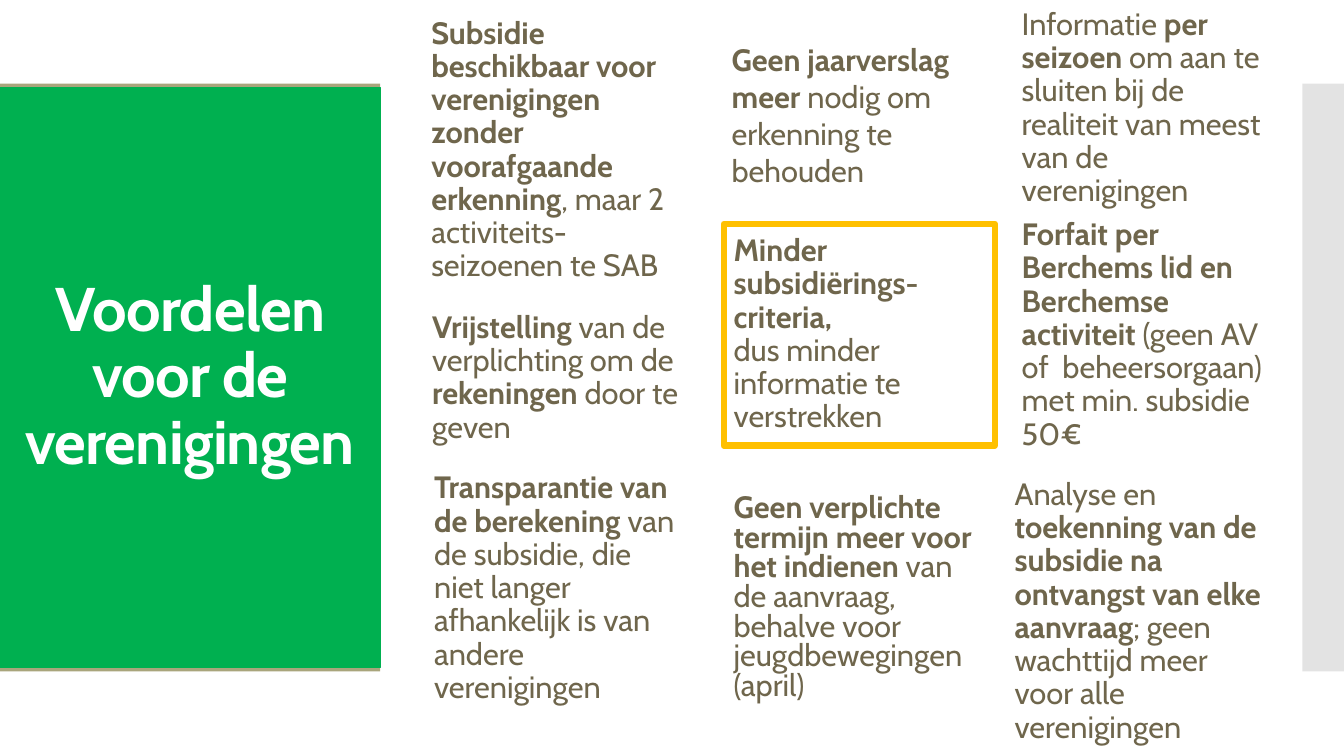
import pptx
import pptx.util
import pptx.dml.color
import pptx.enum.shapes
import pptx.enum.text
from lxml import etree

Cm, Pt = pptx.util.Cm, pptx.util.Pt
Text = pptx.enum.text


def paint(part, color):
    """Give a fill or a font colour from a hex string."""
    if hasattr(part, "solid"):
        part.solid()
        part = part.fore_color
    part.rgb = pptx.dml.color.RGBColor.from_string(color)


def write(box, text, look, color, gap, anchor):
    """Write one paragraph; words between asterisks are bold."""
    frame = box.text_frame
    frame.word_wrap = True
    frame.vertical_anchor = anchor
    para = frame.paragraphs[0]
    para.line_spacing = gap
    for i, part in enumerate(text.split("*")):
        for j, line in enumerate(part.split("\n")):
            if j:
                para.add_line_break()
            if line:
                run = para.add_run()
                run.text = line
                for key, value in look.items():
                    setattr(run.font, key, value)
                run.font.bold = i % 2 == 1
                paint(run.font.color, color)
    return para


deck = pptx.Presentation()
deck.slide_width, deck.slide_height = Cm(33.87), Cm(19.05)
slide = deck.slides.add_slide(deck.slide_layouts[6])

# Side bands and title panel
panels = []
for left, top, width, height, color in [
    (0, 2.11, 9.58, 14.81, "A9A57C"),
    (32.82, 2.11, 1.05, 14.81, "C8C8C8"),
    (0, 2.21, 9.58, 14.61, "00B050"),
]:
    panel = slide.shapes.add_shape(
        pptx.enum.shapes.MSO_SHAPE.RECTANGLE,
        Cm(left), Cm(top), Cm(width), Cm(height))
    panel.shadow.inherit = False
    paint(panel.fill, color)
    panel.line.fill.background()
    panels.append(panel)
band, edge, title = panels

# Half-clear band on the right
tint = edge.fill._xPr.find(".//" + pptx.oxml.ns.qn("a:srgbClr"))
etree.SubElement(tint, pptx.oxml.ns.qn("a:alpha"), val="50000")

# Title
paint(title.line.fill, "00B050")
title.line.width = Pt(0.75)
para = write(title, "*Voordelen voor de verenigingen*",
             {"name": "Cabin", "size": Pt(44)}, "FFFFFF", 0.9,
             Text.MSO_ANCHOR.MIDDLE)
para.alignment = Text.PP_ALIGN.CENTER
para.runs[0]._r.get_or_add_rPr().set("spc", "-60")

# Benefits, column by column
mid, high = Text.MSO_ANCHOR.MIDDLE, Text.MSO_ANCHOR.TOP
notes = [
    (10.62, 0.3, 7.24, 6.99, 0.9, mid,
     "*Subsidie beschikbaar voor verenigingen zonder voorafgaande erkenning*"
     ", maar 2 activiteits-seizoenen te SAB"),
    (10.64, 6.43, 6.83, 6.2, 0.9, mid,
     "*Vrijstelling* van de verplichting om de *rekeningen *door te geven"),
    (10.69, 12.04, 6.83, 5.59, 0.9, mid,
     "*Transparantie van de berekening* van de subsidie, "
     "die niet langer afhankelijk is van andere verenigingen"),
    (18.19, 0.91, 6.6, 4.01, 1.0, high,
     "*Geen jaarverslag meer *nodig om erkenning te behouden"),
    (18.24, 5.64, 6.83, 5.59, 0.9, mid,
     "*Minder subsidiërings-criteria, \n*dus minder informatie te verstrekken"),
    (18.24, 12.29, 6.83, 5.59, 0.8, mid,
     "*Geen verplichte termijn meer voor het indienen *"
     "van de aanvraag, behalve voor jeugdbewegingen (april)"),
    (25.5, 1.07, 6.83, 3.33, 0.9, mid,
     "Informatie *per seizoen *om aan te sluiten bij de realiteit "
     "van meest van de verenigingen"),
    (25.5, 4.55, 7.14, 7.8, 0.9, mid,
     "*Forfait per Berchems lid en Berchemse activiteit *"
     "(geen AV of  beheersorgaan) met min. subsidie 50€"),
    (25.32, 12.62, 6.83, 5.59, 0.9, mid,
     "Analyse en *toekenning van de subsidie na ontvangst van elke aanvraag*"
     "; geen wachttijd meer voor alle verenigingen"),
]
look = {"name": "Cabin", "size": Pt(22)}
boxes = []
for left, top, width, height, gap, anchor, text in notes:
    box = slide.shapes.add_textbox(Cm(left), Cm(top), Cm(width), Cm(height))
    write(box, text, look, "6F664C", gap, anchor)
    boxes.append(box)

# White ground of the first benefit, frame around the middle one
paint(boxes[0].fill, "FFFFFF")
paint(boxes[4].line.fill, "FFC000")
boxes[4].line.width = Pt(4.5)

deck.save("out.pptx")
